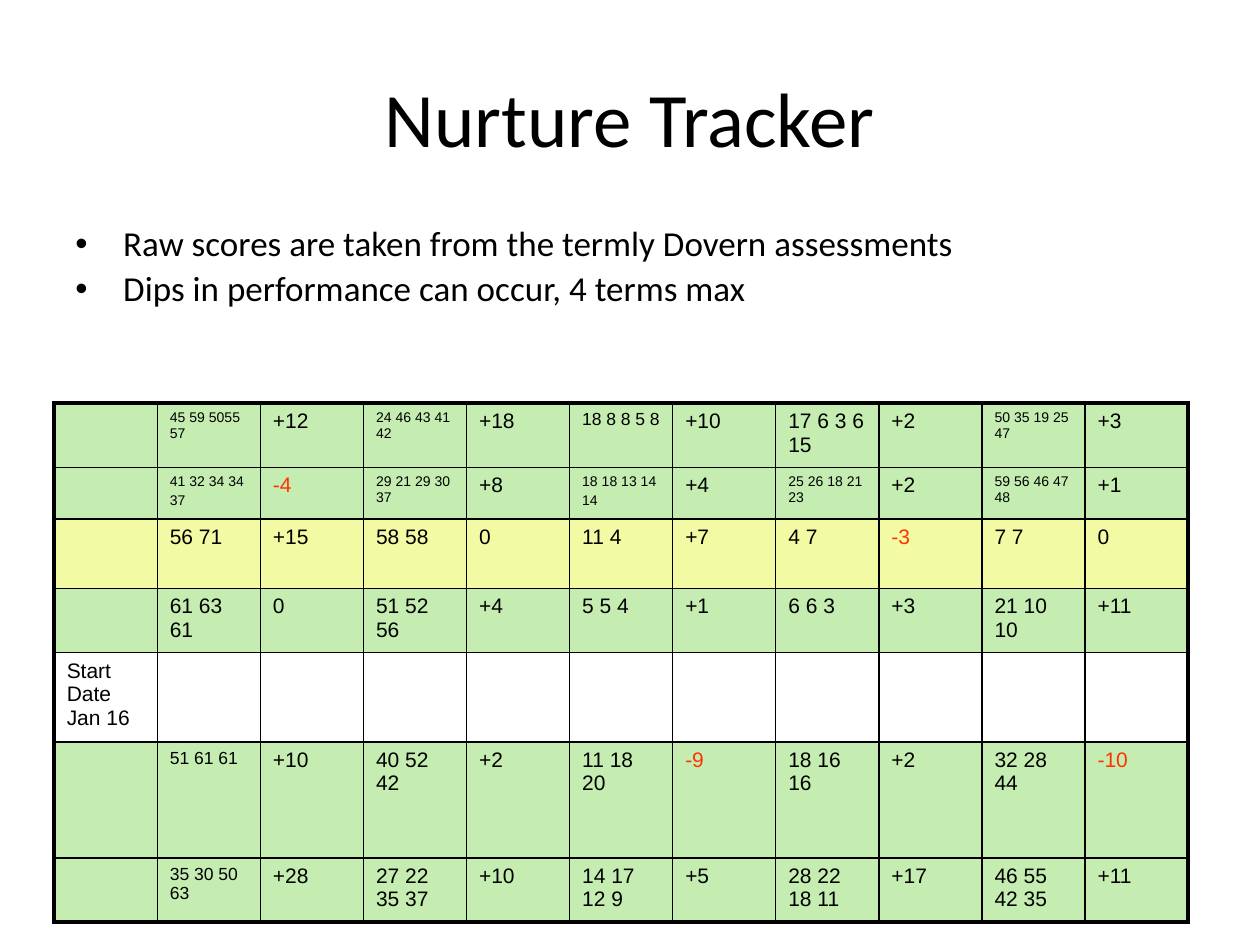
from lxml import etree
from pptx import Presentation
from pptx.dml.color import RGBColor
from pptx.enum.text import MSO_ANCHOR, PP_ALIGN
from pptx.oxml.ns import qn
from pptx.util import Inches, Pt

BLACK = RGBColor(0x00, 0x00, 0x00)
RED = RGBColor(0xFF, 0x33, 0x00)
GREEN = RGBColor(0xC5, 0xED, 0xB1)
YELLOW = RGBColor(0xF2, 0xFA, 0xA4)


def format_run(run, font_name, size, color=BLACK):
    run.font.name = font_name
    run.font.size = Pt(size)
    run.font.color.rgb = color


def add_border(cell, side, width):
    line = etree.SubElement(cell._tc.get_or_add_tcPr(), qn(f"a:ln{side}"), w=str(Pt(width)))
    fill = etree.SubElement(line, qn("a:solidFill"))
    etree.SubElement(fill, qn("a:srgbClr"), val=str(BLACK))


prs = Presentation()
prs.slide_width = Inches(10)
prs.slide_height = Inches(7.5)
slide = prs.slides.add_slide(prs.slide_layouts[6])

title = slide.shapes.add_textbox(Inches(0.5), Inches(0.3), Inches(9), Inches(1.25)).text_frame
title.word_wrap = True
title.vertical_anchor = MSO_ANCHOR.MIDDLE
title.text = "Nurture Tracker"
title.paragraphs[0].alignment = PP_ALIGN.CENTER
format_run(title.paragraphs[0].runs[0], "Calibri", 44)

notes = slide.shapes.add_textbox(Inches(0.5), Inches(1.75), Inches(9), Inches(1.29)).text_frame
notes.word_wrap = True
notes.text = (
    "Raw scores are taken from the termly Dovern assessments\n"
    "Dips in performance can occur, 4 terms max"
)
for paragraph in notes.paragraphs:
    paragraph.line_spacing = 0.9
    paragraph.space_before = Pt(4)
    format_run(paragraph.runs[0], "Calibri", 20)
    properties = paragraph._p.get_or_add_pPr()
    properties.set("marL", str(Inches(0.38)))
    properties.set("indent", str(Inches(-0.38)))
    etree.SubElement(properties, qn("a:buFont"), typeface="Arial")
    etree.SubElement(properties, qn("a:buChar"), char="•")

score_rows = [
    (0.51, GREEN, ["", "45 59 5055 57", "+12", "24 46 43 41 42", "+18", "18 8 8 5 8", "+10",
                   "17 6 3 6 15", "+2", "50 35 19 25 47", "+3"]),
    (0.41, GREEN, ["", "41 32 34 34 37", "-4", "29 21 29 30 37", "+8", "18 18 13 14 14", "+4",
                   "25 26 18 21 23", "+2", "59 56 46 47 48", "+1"]),
    (0.55, YELLOW, ["", "56 71", "+15", "58 58", "0", "11 4", "+7", "4 7", "-3", "7 7", "0"]),
    (0.51, GREEN, ["", "61 63 61", "0", "51 52 56", "+4", "5 5 4", "+1", "6 6 3", "+3",
                   "21 10 10", "+11"]),
    (0.71, None, ["Start Date Jan 16"] + [""] * 10),
    (0.92, GREEN, ["", "51 61 61", "+10", "40 52 42", "+2", "11 18 20", "-9", "18 16 16", "+2",
                   "32 28 44", "-10"]),
    (0.51, GREEN, ["", "35 30 50 63", "+28", "27 22 35 37", "+10", "14 17 12 9", "+5",
                   "28 22 18 11", "+17", "46 55 42 35", "+11"]),
]
small_sizes = {
    (0, 1): 8, (0, 3): 8, (0, 5): 10, (0, 9): 8,
    (1, 1): 8, (1, 3): 8, (1, 5): 8, (1, 7): 8, (1, 9): 8,
    (5, 1): 10, (6, 1): 10,
}
trailing_space_cells = {(1, 1), (1, 5)}

last_row = len(score_rows) - 1
last_column = len(score_rows[0][2]) - 1
tracker = slide.shapes.add_table(
    last_row + 1, last_column + 1, Inches(0.43), Inches(3.2), Inches(9), Inches(4.12)
).table
tracker.first_row = False
tracker.horz_banding = False

for r, (height, row_color, scores) in enumerate(score_rows):
    tracker.rows[r].height = Inches(height)
    for c, score in enumerate(scores):
        cell = tracker.cell(r, c)
        outer_sides = {"L": c == 0, "R": c == last_column, "T": r == 0, "B": r == last_row}
        for side, is_outer in outer_sides.items():
            add_border(cell, side, 2.25 if is_outer else 1)
        if row_color is None:
            cell.fill.background()
        else:
            cell.fill.solid()
            cell.fill.fore_color.rgb = row_color
        if score:
            cell.text_frame.text = score
            paragraph = cell.text_frame.paragraphs[0]
            color = RED if score.startswith("-") else BLACK
            format_run(paragraph.runs[0], "Arial", small_sizes.get((r, c), 12), color)
            if (r, c) in trailing_space_cells:
                space = paragraph.add_run()
                space.text = " "
                format_run(space, "Arial", 10)

prs.save("out.pptx")
